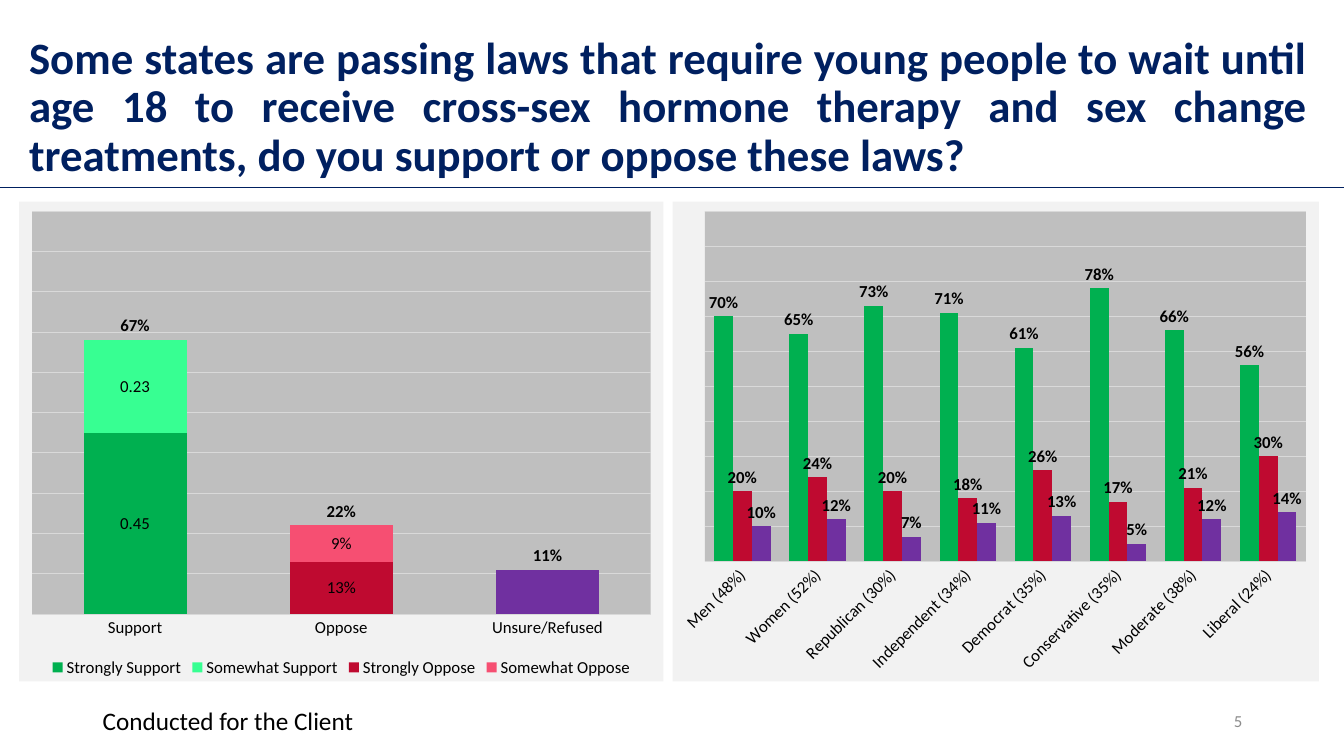
from dataclasses import dataclass
from typing import Optional

from pptx import Presentation
from pptx import util as u
from pptx.chart.data import CategoryChartData
from pptx.dml.color import RGBColor
from pptx.enum import chart as ch, shapes, text
from pptx.oxml import parse_xml
from pptx.oxml.ns import nsdecls, qn

PX = 9144  # EMU per px, 100 px to the inch
FONT = "Calibri"
COLORS = {
    "navy": "002060", "black": "000000", "page_no": "8C8C8C",
    "grid": "D9D9D9", "panel": "F2F2F2", "plot": "BFBFBF",
    "green": "00B050", "mint": "37FF92", "red": "BF0A30",
    "pink": "F64F72", "purple": "7030A0",
}
POS = ch.XL_LABEL_POSITION
ALIGN = text.PP_ALIGN
ANCHOR = text.MSO_ANCHOR


@dataclass
class Label:
    pos: POS
    fmt: str = "0%"
    bold: bool = False


@dataclass
class Series:
    name: str
    values: list[Optional[float]]
    color: Optional[str]
    label: Optional[Label]


@dataclass
class Chart:
    box: tuple[int, int, int, int]
    kind: ch.XL_CHART_TYPE
    categories: list[str]
    series: list[Series]
    plot_area: tuple[float, float, float, float]  # x, y, w, h as fractions
    overlap: int = 0
    label_angle: int = 0
    legend_hides: tuple[int, ...] = ()
    legend: bool = False


@dataclass
class TextBox:
    box: tuple[int, int, int, int]
    words: str
    size: int
    color: str
    align: ALIGN = ALIGN.LEFT
    anchor: ANCHOR = ANCHOR.TOP
    bold: bool = False
    spacing: float = 1.0


def px(*lengths: int) -> list[u.Emu]:
    return [u.Emu(n * PX) for n in lengths]


def rgb(name: str) -> RGBColor:
    return RGBColor.from_string(COLORS[name])


def set_font(font, size: int, color: str = "black", bold: bool = False) -> None:
    font.name, font.size, font.bold = FONT, u.Pt(size), bold
    font.color.rgb = rgb(color)


def set_line(line, color: str, width: float) -> None:
    line.color.rgb = rgb(color)
    line.width = u.Pt(width)


def add_text(s, item: TextBox) -> None:
    tf = s.shapes.add_textbox(*px(*item.box)).text_frame
    tf.word_wrap = True
    tf.vertical_anchor = item.anchor
    p = tf.paragraphs[0]
    p.alignment, p.line_spacing = item.align, item.spacing
    r = p.add_run()
    r.text = item.words
    set_font(r.font, item.size, item.color, item.bold)


def area_fill(color: str):
    return parse_xml(
        f'<c:spPr {nsdecls("c", "a")}><a:solidFill><a:srgbClr val="{COLORS[color]}"/>'
        "</a:solidFill><a:ln><a:noFill/></a:ln></c:spPr>")


def style_areas(chart, plot_area: tuple[float, float, float, float]) -> None:
    root = chart.element
    root.find(qn("c:chart")).addnext(area_fill("panel"))
    area = root.find(qn("c:chart")).find(qn("c:plotArea"))
    for old in area.findall(qn("c:layout")):
        area.remove(old)
    sizes = "".join(f'<c:{tag} val="{v}"/>' for tag, v in zip("xywh", plot_area))
    area.insert(0, parse_xml(
        f'<c:layout {nsdecls("c")}><c:manualLayout><c:layoutTarget val="inner"/>'
        f'<c:xMode val="edge"/><c:yMode val="edge"/>{sizes}</c:manualLayout></c:layout>'))
    area.append(area_fill("plot"))


def style_axes(chart, angle: int) -> None:
    cat, val = chart.category_axis, chart.value_axis
    cat.major_tick_mark = cat.minor_tick_mark = ch.XL_TICK_MARK.NONE
    set_line(cat.format.line, "grid", 0.75)
    set_font(cat.tick_labels.font, 12)
    if angle:
        body = cat._element.find(qn("c:txPr")).find(qn("a:bodyPr"))
        body.set("rot", str(angle * 60000))
    val.minimum_scale, val.maximum_scale, val.major_unit = 0, 1, 0.1
    val.has_major_gridlines = True
    set_line(val.major_gridlines.format.line, "grid", 0.75)
    val.visible = False


def style_series(bars, item: Series) -> None:
    bars.invert_if_negative = False
    if item.color:
        bars.format.fill.solid()
        bars.format.fill.fore_color.rgb = rgb(item.color)
    else:
        bars.format.fill.background()
    bars.format.line.fill.background()
    if item.label:
        labels = bars.data_labels
        set_font(labels.font, 12, bold=item.label.bold)
        labels.number_format = item.label.fmt
        labels.number_format_is_linked = False
        labels.position = item.label.pos
        labels.show_value = True


def add_legend(chart, hides: tuple[int, ...]) -> None:
    chart.has_legend = True
    legend = chart.legend
    legend.position = ch.XL_LEGEND_POSITION.BOTTOM
    legend.include_in_layout = False
    set_font(legend.font, 12)
    pos = legend._element.find(qn("c:legendPos"))
    for idx in reversed(hides):
        pos.addnext(parse_xml(f'<c:legendEntry {nsdecls("c")}><c:idx val="{idx}"/>'
                              '<c:delete val="1"/></c:legendEntry>'))


def add_chart(s, item: Chart) -> None:
    data = CategoryChartData(number_format="0%")
    data.categories = item.categories
    for one in item.series:
        data.add_series(one.name, one.values)
    chart = s.shapes.add_chart(item.kind, *px(*item.box), data).chart
    set_font(chart.font, 10)
    chart.has_title = chart.has_legend = False
    plot = chart.plots[0]
    plot.gap_width, plot.overlap, plot.vary_by_categories = 100, item.overlap, False
    style_axes(chart, item.label_angle)
    for bars, one in zip(plot.series, item.series):
        style_series(bars, one)
    if item.legend:
        add_legend(chart, item.legend_hides)
    style_areas(chart, item.plot_area)


TOTAL = Label(POS.INSIDE_BASE, bold=True)
PLAIN, PERCENT = Label(POS.CENTER, "General"), Label(POS.CENTER)
GROUP = Label(POS.OUTSIDE_END, bold=True)

CHARTS = [
    Chart((667, 200, 641, 476), ch.XL_CHART_TYPE.COLUMN_CLUSTERED,
          ["Men (48%)", "Women (52%)", "Republican (30%)", "Independent (34%)",
           "Democrat (35%)", "Conservative (35%)", "Moderate (38%)", "Liberal (24%)"],
          [Series("Series 1", [.7, .65, .73, .71, .61, .78, .66, .56], "green", GROUP),
           Series("Series 2", [.2, .24, .2, .18, .26, .17, .21, .3], "red", GROUP),
           Series("Series 3", [.1, .12, .07, .11, .13, .05, .12, .14], "purple", GROUP)],
          (0.05, 0.02, 0.93, 0.73), label_angle=-45),
    Chart((19, 200, 639, 476), ch.XL_CHART_TYPE.COLUMN_STACKED,
          ["Support", "Oppose", "Unsure/Refused"],
          [Series("Strongly Support", [.45, None, None], "green", PLAIN),
           Series("Somewhat Support", [.23, None, None], "mint", PLAIN),
           Series("Strongly Oppose", [None, .13, None], "red", PERCENT),
           Series("Somewhat Oppose", [None, .09, None], "pink", PERCENT),
           Series("Series 5", [None, None, .11], "purple", None),
           Series("Series 6", [.67, .22, .11], None, TOTAL)],
          (0.02, 0.02, 0.96, 0.84), overlap=100, legend=True, legend_hides=(4, 5)),
]

TEXTS = [
    TextBox((942, 695, 300, 40), "5", 12, "page_no", ALIGN.RIGHT, ANCHOR.MIDDLE),
    TextBox((92, 695, 300, 40), "Conducted for the Client", 18, "black"),
    TextBox((19, 35, 1288, 145),
            "Some states are passing laws that require young people to wait until age 18 "
            "to receive cross-sex hormone therapy and sex change treatments, do you "
            "support or oppose these laws?",
            32, "navy", ALIGN.JUSTIFY, ANCHOR.MIDDLE, True, 0.9),
]


def main() -> None:
    prs = Presentation()
    prs.slide_width, prs.slide_height = px(1333, 750)
    s = prs.slides.add_slide(prs.slide_layouts[6])

    # Rule under the title
    rule = s.shapes.add_connector(shapes.MSO_CONNECTOR.STRAIGHT, *px(0, 186, 1333, 186))
    set_line(rule.line, "navy", 0.5)
    rule._element.spPr.append(parse_xml(f'<a:effectLst {nsdecls("a")}/>'))

    # Charts, then title and footer
    for item in CHARTS:
        add_chart(s, item)
    for item in TEXTS:
        add_text(s, item)
    prs.save("out.pptx")


if __name__ == "__main__":
    main()
